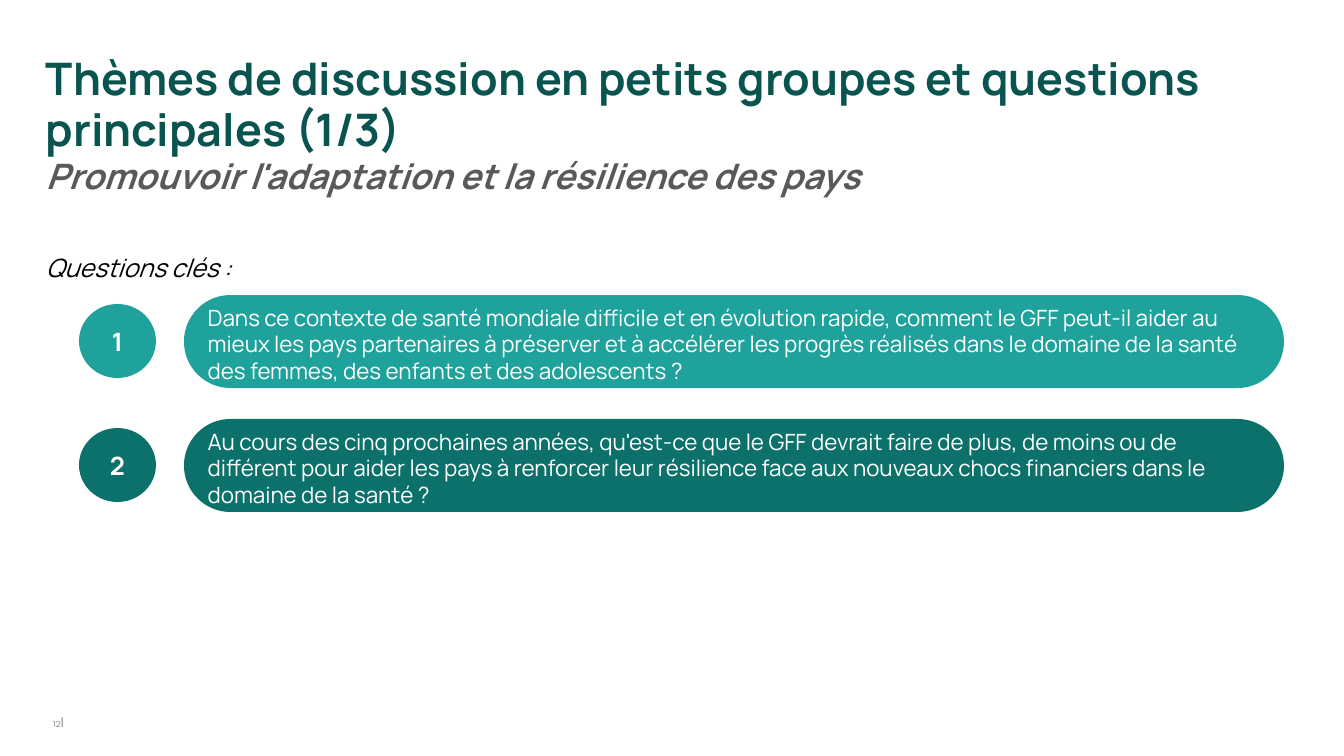
from pptx import Presentation
from pptx.dml.color import RGBColor
from pptx.enum.shapes import MSO_SHAPE
from pptx.enum.text import MSO_ANCHOR, PP_ALIGN
from pptx.util import Pt

SCALE = 914400 / 100.8
FONT = "Manrope"
COLORS = {
    "white": "FFFFFF", "black": "000000", "grey": "808080", "subtitle": "595959",
    "title": "09544F", "light_teal": "1FA29C", "dark_teal": "0C716B",
}
PILL, CIRCLE, RECTANGLE = (
    MSO_SHAPE.ROUNDED_RECTANGLE, MSO_SHAPE.FLOWCHART_CONNECTOR, MSO_SHAPE.RECTANGLE)
TOP, MIDDLE = MSO_ANCHOR.TOP, MSO_ANCHOR.MIDDLE
LEFT, CENTER, RIGHT = PP_ALIGN.LEFT, PP_ALIGN.CENTER, PP_ALIGN.RIGHT

QUESTIONS = [
    ("light_teal", "Dans ce contexte de santé mondiale difficile et en évolution rapide, "
     "comment le GFF peut-il aider au mieux les pays partenaires à préserver et à accélérer "
     "les progrès réalisés dans le domaine de la santé des femmes, des enfants et des "
     "adolescents ?"),
    ("dark_teal", "Au cours des cinq prochaines années, qu'est-ce que le GFF devrait faire de "
     "plus, de moins ou de différent pour aider les pays à renforcer leur résilience face aux "
     "nouveaux chocs financiers dans le domaine de la santé ?"),
]
FIRST_ROW, ROW_STEP = 295, 124


def px(length):
    return round(length * SCALE)


def color(name):
    return RGBColor.from_string(COLORS[name])


def add_run(paragraph, text, size, ink="white", bold=False, italic=False, new_line=False):
    if new_line:
        paragraph.add_line_break()
    run = paragraph.add_run()
    run.text = text
    run.font.name = FONT
    run.font.size = Pt(size)
    run.font.bold = bold
    run.font.italic = italic
    run.font.color.rgb = color(ink)


class SlideBuilder:
    def __init__(self, slide):
        self.slide = slide

    def frame(self, shape, anchor, insets):
        """Set wrapping, anchor and insets (left, top, right, bottom)."""
        frame = shape.text_frame
        frame.word_wrap = True
        frame.vertical_anchor = anchor
        (frame.margin_left, frame.margin_top,
         frame.margin_right, frame.margin_bottom) = map(px, insets)
        return frame

    def paragraph(self, frame, runs, first=True, align=LEFT, spacing=1.0, before=0):
        """Fill the first paragraph, or a new one, with (text, format) runs."""
        paragraph = frame.paragraphs[0] if first else frame.add_paragraph()
        paragraph.alignment = align
        paragraph.line_spacing = spacing
        paragraph.space_before = Pt(before)
        for text, style in runs:
            add_run(paragraph, text, **style)

    def text_box(self, box, insets):
        shape = self.slide.shapes.add_textbox(*map(px, box))
        return self.frame(shape, TOP, insets)

    def shape(self, kind, box, fill, insets=(0, 0, 0, 0)):
        shape = self.slide.shapes.add_shape(kind, *map(px, box))
        shape.shadow.inherit = False
        shape.fill.solid()
        shape.fill.fore_color.rgb = color(fill)
        shape.line.fill.background()
        if kind == PILL:
            shape.adjustments[0] = 0.5
        return self.frame(shape, MIDDLE, insets)

    def question(self, number, top, fill, text):
        circle = self.shape(CIRCLE, (79, top + 9, 77, 74), fill)
        self.paragraph(circle, [(str(number), dict(size=18, bold=True))], align=CENTER)
        pill = self.shape(PILL, (184, top, 1100, 93), fill, (10, 5, 10, 0))
        self.paragraph(pill, [(text, dict(size=16))])


def main():
    presentation = Presentation()
    presentation.slide_width, presentation.slide_height = px(1344), px(756)
    slide = presentation.slides.add_slide(presentation.slide_layouts[6])
    builder = SlideBuilder(slide)

    page = builder.shape(RECTANGLE, (21, 716, 43, 13), "white")
    builder.paragraph(page, [("12", dict(size=6, ink="grey")),
                             ("|", dict(size=9.6, ink="grey"))], align=RIGHT)

    title = builder.text_box((46, 45, 1255, 90), (0, 10, 0, 0))
    builder.paragraph(title, [
        ("Thèmes de discussion en petits groupes et questions principales (1/3)",
         dict(size=32, ink="title", bold=True)),
        ("Promouvoir l'adaptation et la résilience des pays",
         dict(size=25, ink="subtitle", bold=True, italic=True, new_line=True)),
    ], spacing=0.95)
    builder.paragraph(title, [("Questions clés :", dict(size=18, ink="black", italic=True))],
                      first=False, spacing=0.95, before=41)

    for index, (fill, text) in enumerate(QUESTIONS):
        builder.question(index + 1, FIRST_ROW + index * ROW_STEP, fill, text)

    presentation.save("out.pptx")


if __name__ == "__main__":
    main()
